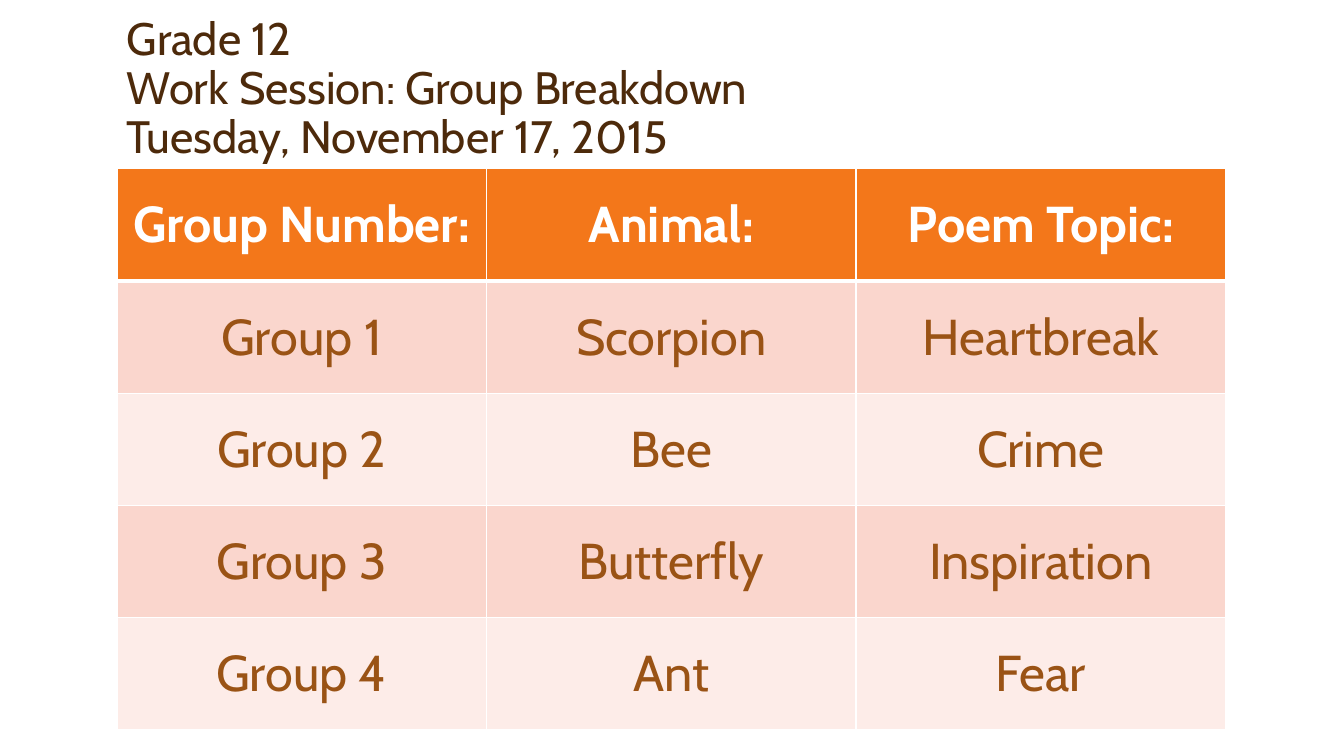
from dataclasses import dataclass
from lxml.etree import SubElement as Sub
from pptx import Presentation
from pptx.dml.color import RGBColor as Rgb
from pptx.enum.text import MSO_ANCHOR as Anchor, PP_ALIGN as Align
from pptx.oxml.ns import qn
from pptx.util import Pt


@dataclass(frozen=True)
class Theme:
    font: str = "Cabin"
    title: str = "4D2A0B"
    head: str = "F3771A"
    body: str = "9A5315"
    white: str = "FFFFFF"
    bands: tuple = ("FAD6CD", "FDECE8")
    title_size: float = 32.4
    cell_size: float = 36


class Deck:
    """Draws styled elements on the current slide."""

    def __init__(self, theme):
        self.theme = theme
        self.prs = Presentation()
        self.prs.slide_width, self.prs.slide_height = Pt(960), Pt(540)
        self.slide = self.prs.slides.add_slide(self.prs.slide_layouts[6])

    def run(self, para, text, size, color, bold=False):
        run = para.add_run()
        run.text = text
        font = run.font
        font.name, font.size, font.bold = self.theme.font, Pt(size), bold
        font.color.rgb = Rgb.from_string(color)

    def title(self, lines, x, y, w, h):
        frame = self.slide.shapes.add_textbox(Pt(x), Pt(y), Pt(w), Pt(h)).text_frame
        frame.word_wrap = True
        frame.vertical_anchor = Anchor.BOTTOM
        para = frame.paragraphs[0]
        para.line_spacing = 0.9
        for i, line in enumerate(lines):
            if i:
                para.add_line_break()
            self.run(para, line, self.theme.title_size, self.theme.title)

    def border(self, cell, base):
        props = cell._tc.get_or_add_tcPr()
        for side, width in zip("LRTB", (1, 1, 1, base)):
            line = Sub(props, qn(f"a:ln{side}"), w=str(Pt(width)))
            Sub(Sub(line, qn("a:solidFill")), qn("a:srgbClr"), val=self.theme.white)

    def cell(self, cell, text, row):
        look = self.theme
        head = row == 0
        self.border(cell, 3 if head else 1)
        cell.fill.solid()
        fill = look.head if head else look.bands[(row - 1) % 2]
        cell.fill.fore_color.rgb = Rgb.from_string(fill)
        cell.vertical_anchor = Anchor.MIDDLE
        para = cell.text_frame.paragraphs[0]
        para.alignment = Align.CENTER
        self.run(para, text, look.cell_size, look.white if head else look.body, head)

    def table(self, rows, x, y, w, h):
        grid = self.slide.shapes.add_table(
            len(rows), len(rows[0]), Pt(x), Pt(y), Pt(w), Pt(h)).table
        for r, row in enumerate(rows):
            grid.rows[r].height = Pt(h / len(rows))
            for c, text in enumerate(row):
                self.cell(grid.cell(r, c), text, r)

    def save(self):
        self.prs.save("out.pptx")


def main():
    deck = Deck(Theme())
    left, width = 83.5, 792
    deck.title(
        ("Grade 12", "Work Session: Group Breakdown", "Tuesday, November 17, 2015"),
        left, 24, width, 96)
    deck.table((
        ("Group Number:", "Animal:", "Poem Topic:"),
        ("Group 1", "Scorpion", "Heartbreak"),
        ("Group 2", "Bee", "Crime"),
        ("Group 3", "Butterfly", "Inspiration"),
        ("Group 4", "Ant", "Fear"),
    ), left, 120.5, width, 401)
    deck.save()


if __name__ == "__main__":
    main()
